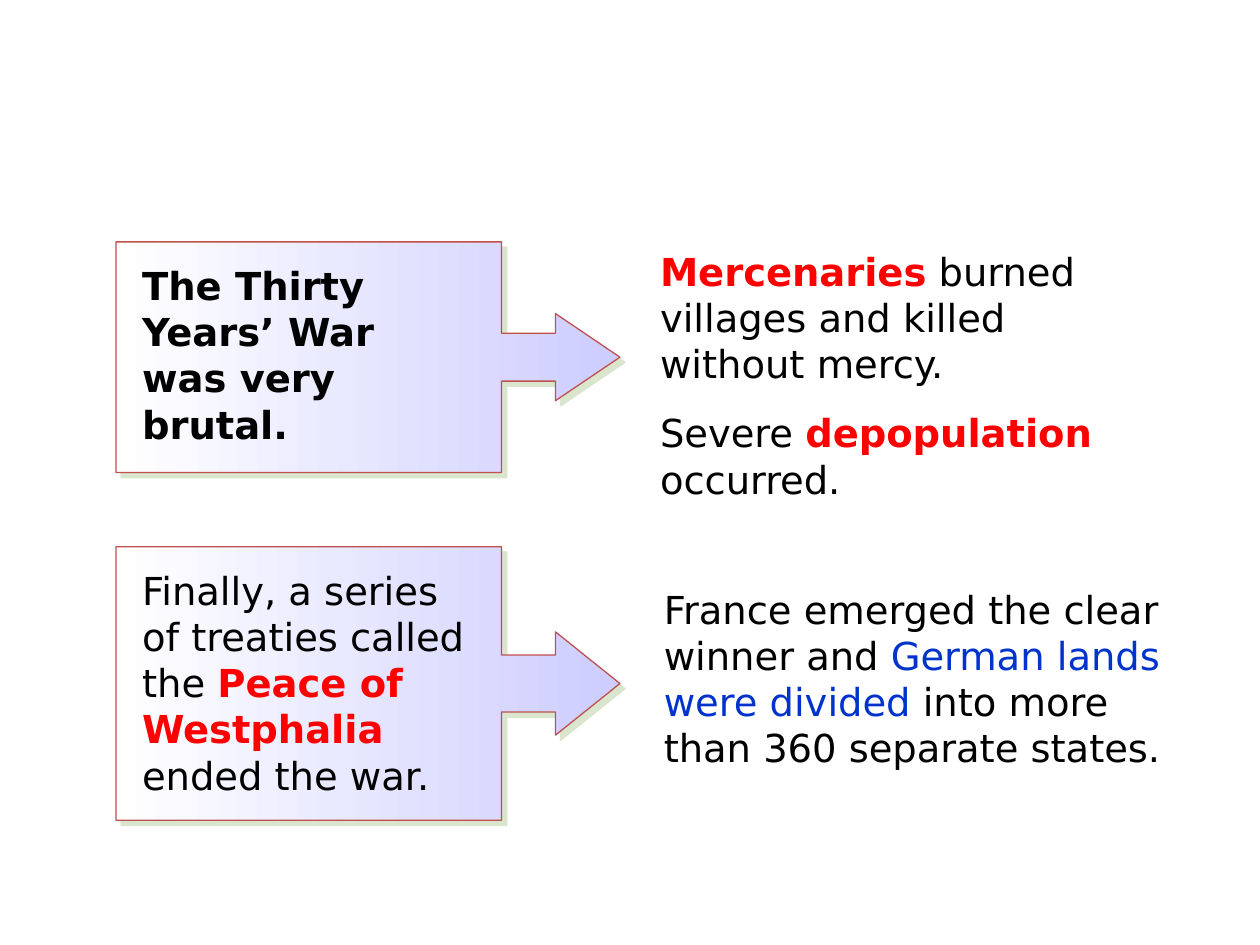
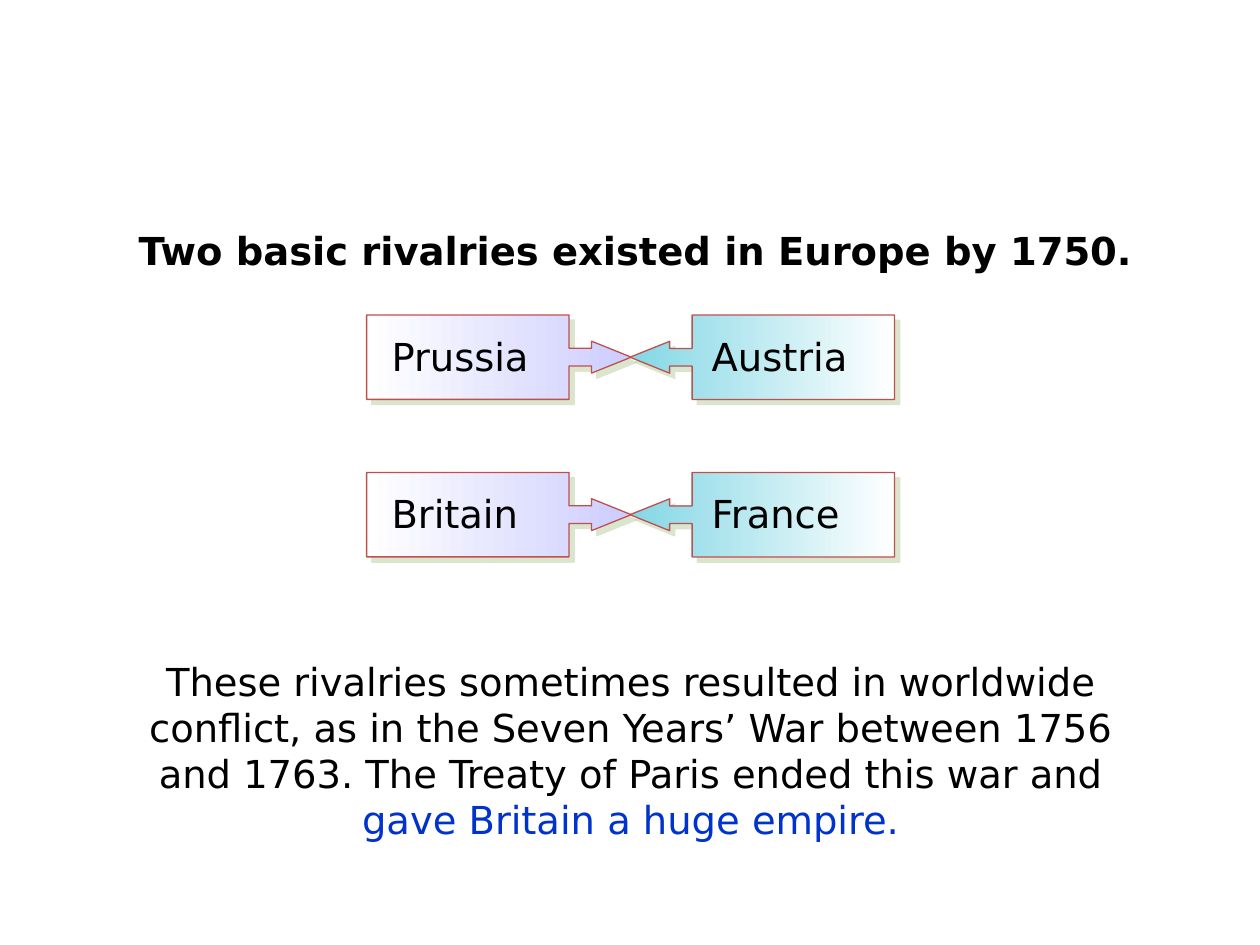
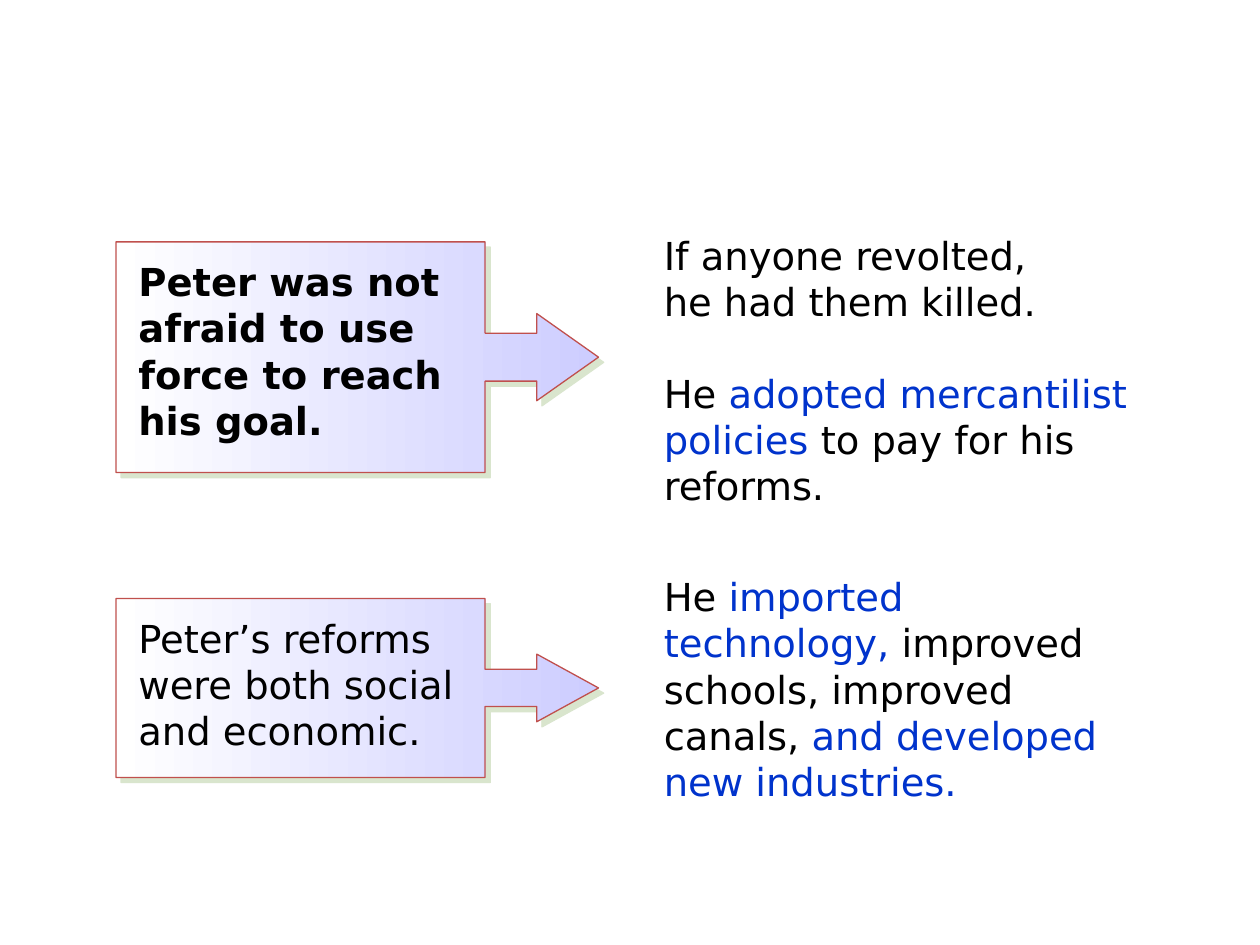
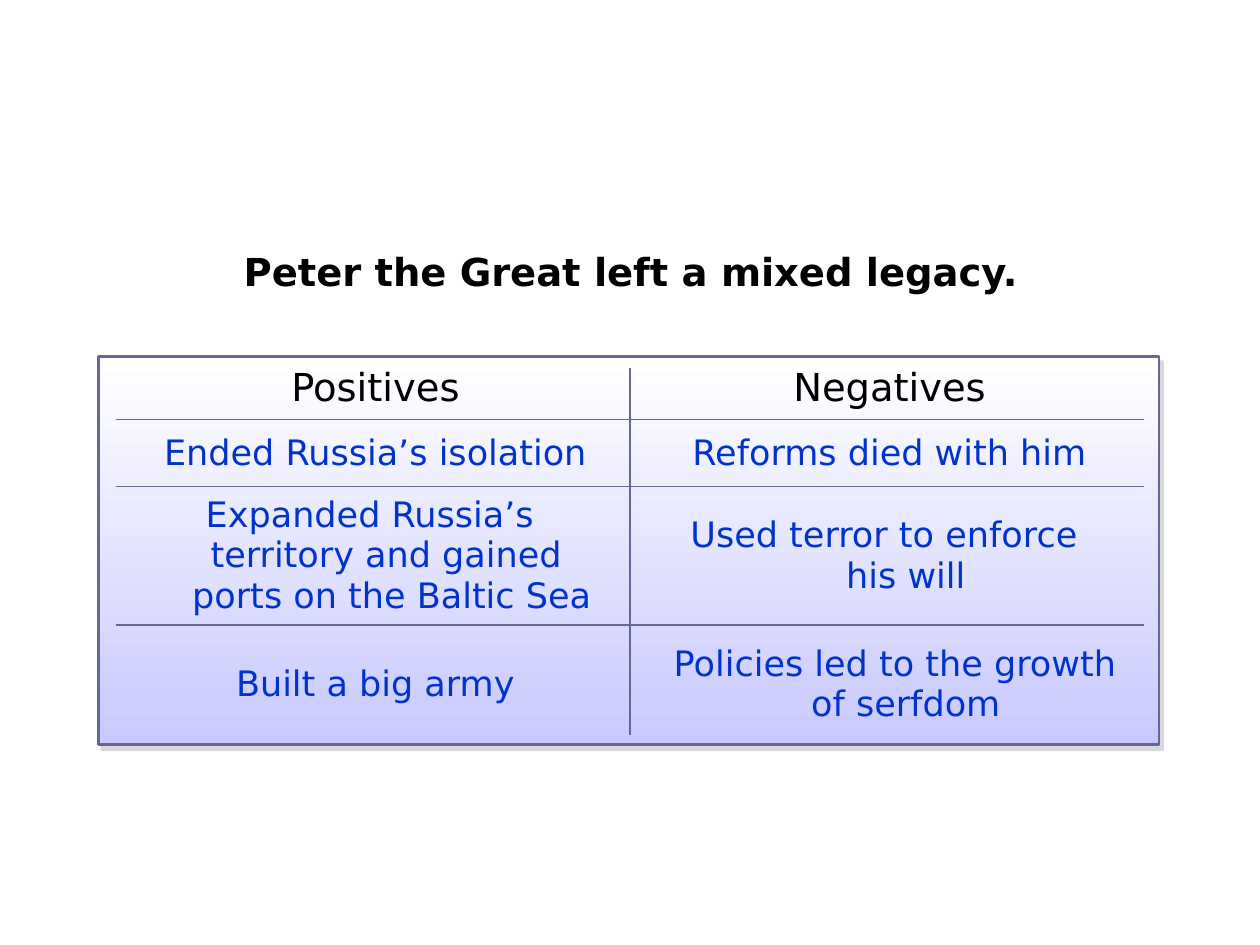
from lxml import etree
from pptx import Presentation
from pptx.dml.color import RGBColor
from pptx.enum.shapes import MSO_CONNECTOR, MSO_SHAPE
from pptx.enum.text import MSO_ANCHOR, MSO_AUTO_SIZE, PP_ALIGN
from pptx.oxml import parse_xml
from pptx.oxml.ns import nsdecls, qn
from pptx.util import Inches, Pt

STRAIGHT = MSO_CONNECTOR.STRAIGHT
CALLOUT = MSO_SHAPE.UP_ARROW_CALLOUT
RECT = MSO_SHAPE.RECTANGLE
TOP, MIDDLE = MSO_ANCHOR.TOP, MSO_ANCHOR.MIDDLE
GROW = MSO_AUTO_SIZE.SHAPE_TO_FIT_TEXT
LEFT, CENTER = PP_ALIGN.LEFT, PP_ALIGN.CENTER

TITLE_ONLY, BLANK = 5, 6
FONT = "DejaVu Sans"
COLORS = {
    "black": "000000", "red": "FF0000", "blue": "0033CC", "white": "FFFFFF",
    "lilac": "CDCDFF", "aqua": "83D7E5", "mist": "C9C9FF",
    "brick": "C0504D", "slate": "666699", "moss": "ADC793", "gray": "B2B2B2",
}
STYLES = {
    "plain": ("black", {"bold": False}),
    "bold": ("black", {"bold": True}),
    "key": ("red", {"bold": True}),
    "blue": ("blue", {"bold": False}),
}
FRAME = {"word_wrap": True, "auto_size": GROW, "vertical_anchor": TOP}
CARD_SHADE = ("moss", 46, 4.2, 45)
PANEL_SHADE = ("gray", 50, 3.6, 56)
BOX_SHARE = 0.765


def rgb(name):
    return RGBColor.from_string(COLORS[name])


def assign(item, values):
    for name, value in values.items():
        setattr(item, name, value)


def write(para, runs, size=22, align=LEFT):
    """Fill a paragraph from (text, style) pairs; a newline is a line break."""
    para.alignment = align
    for words, style in runs:
        color, values = STYLES[style]
        for i, part in enumerate(words.split("\n")):
            if i:
                para.add_line_break()
            run = para.add_run()
            run.text = part
            assign(run.font, {"name": FONT, "size": Pt(size), **values})
            run.font.color.rgb = rgb(color)


def text(slide, spot, *paras, gap=0, align=LEFT):
    box = slide.shapes.add_textbox(*map(Inches, spot))
    frame = box.text_frame
    assign(frame, FRAME)
    for i, runs in enumerate(paras):
        para = frame.add_paragraph() if i else frame.paragraphs[0]
        if i:
            para.space_before = Pt(gap)
        write(para, runs, align=align)


def title(slide, spot, words, align=CENTER):
    head = slide.shapes.title
    for name, value in zip(("left", "top", "width", "height"), spot):
        setattr(head, name, Inches(value))
    assign(head.text_frame, FRAME)
    write(head.text_frame.paragraphs[0], [(words, "bold")], align=align)


def shade(shape, color, alpha, dist, angle):
    """Give the shape a hard-edged shadow that ignores rotation."""
    shape.shadow.inherit = False
    effects = shape._element.spPr.find(qn("a:effectLst"))
    effects.append(parse_xml(
        f'<a:outerShdw {nsdecls("a")} blurRad="0" dist="{Pt(dist)}" '
        f'dir="{angle * 60000}" algn="ctr" rotWithShape="0">'
        f'<a:srgbClr val="{COLORS[color]}"><a:alpha val="{alpha * 1000}"/>'
        '</a:srgbClr></a:outerShdw>'))


def panel(slide, kind, spot, fades, line, weight, shadow):
    """Add a shape whose fill fades downwards from one colour to another."""
    shape = slide.shapes.add_shape(kind, *map(Inches, spot))
    shape.fill.gradient()
    shape.fill.gradient_angle = 270
    for stop, color in zip(shape.fill.gradient_stops, fades):
        stop.color.rgb = rgb(color)
    shape.line.color.rgb = rgb(line)
    shape.line.width = Pt(weight)
    shade(shape, *shadow)
    return shape


def callout(slide, spot, tint="lilac", turn=90, head=0.128):
    """Turn an arrow callout sideways so that it covers spot."""
    left, top, long, thick = spot
    upright = (left + (long - thick) / 2, top + (thick - long) / 2, thick, long)
    shape = panel(slide, CALLOUT, upright, (tint, "white"), "brick", 0.75,
                  CARD_SHADE)
    shape.rotation = turn
    for i, value in enumerate((0.208, 0.189, head * long / thick, BOX_SHARE)):
        shape.adjustments[i] = value


def card(slide, spot, runs, pad, wide):
    callout(slide, spot)
    left, top, _, thick = spot
    text(slide, (left + pad, top + pad, wide, thick - 2 * pad), runs)


def rivals(slide, top, names):
    """Set two callouts head to head."""
    long, thick = 2.1, 0.67
    sides = ((2.91, 0.1, "lilac", 90), (5.0, 0.55, "aqua", 270))
    for name, (left, pad, tint, turn) in zip(names, sides):
        callout(slide, (left, top, long, thick), tint, turn, head=0.15)
        text(slide, (left + pad, top + 0.09, 1.45, 0.47), [(name, "plain")])


def edge(cell, side, weight):
    """Draw one cell border, or hide it when weight is 0."""
    line = etree.SubElement(cell._tc.get_or_add_tcPr(), qn(f"a:ln{side}"),
                            w=str(Pt(weight)))
    if not weight:
        etree.SubElement(line, qn("a:noFill"))
        return
    fill = etree.SubElement(line, qn("a:solidFill"))
    etree.SubElement(fill, qn("a:srgbClr"), val=COLORS["slate"])


def table(slide, spot, cols, rows, rules, data):
    """Add a clear table; rules are the line widths above and below rows."""
    grid = slide.shapes.add_table(len(rows), len(cols),
                                  *map(Inches, spot)).table
    assign(grid, {"first_row": False, "horz_banding": False})
    for col, wide in zip(grid.columns, cols):
        col.width = Inches(wide)
    for r, words in enumerate(data):
        grid.rows[r].height = Inches(rows[r])
        size, style = (20, "blue") if r else (22, "plain")
        for c, word in enumerate(words):
            cell = grid.cell(r, c)
            cell.vertical_anchor = MIDDLE
            para = cell.text_frame.paragraphs[0]
            write(para, [(word, style)], size, CENTER)
            props = para._p.get_or_add_pPr()
            props.set("marL", str(Inches(0.26)))
            props.set("indent", str(Inches(-0.26)))
            for side, weight in zip("LRTB", (0, 0, rules[r], rules[r + 1])):
                edge(cell, side, weight)
            cell.fill.background()


def rule(slide, start, end):
    line = slide.shapes.add_connector(STRAIGHT, *map(Inches, start + end))
    line.line.color.rgb = rgb("slate")
    line.line.width = Pt(0.75)
    etree.SubElement(line._element.spPr, qn("a:effectLst"))


def war(slide):
    card(slide, (0.92, 1.92, 4, 1.83),
         [("The Thirty Years’ War \nwas very \nbrutal.", "bold")], 0.11, 3.06)
    card(slide, (0.92, 4.34, 4, 2.17),
         [("Finally, a series \nof treaties called the ", "plain"),
          ("Peace of Westphalia", "key"), (" ended the war.", "plain")],
         0.11, 3.06)
    text(slide, (5.14, 1.92, 4.08, 2.4),
         [("Mercenaries", "key"),
          (" burned villages and killed without mercy.", "plain")],
         [("Severe ", "plain"), ("depopulation", "key"),
          (" occurred.", "plain")], gap=13)
    text(slide, (5.17, 4.6, 4.5, 1.59),
         [("France emerged the clear winner and ", "plain"),
          ("German lands were divided", "blue"),
          (" into more than 360 separate states.", "plain")])


def europe(slide):
    title(slide, (1, 1.75, 8.25, 0.47),
          "Two basic rivalries existed in Europe by 1750.", LEFT)
    rivals(slide, 2.5, ("Prussia", "Austria"))
    rivals(slide, 3.75, ("Britain", "France"))
    text(slide, (0.92, 5.17, 8.17, 1.59),
         [("These rivalries sometimes resulted in worldwide conflict, as in "
           "the Seven Years’ War between 1756 and 1763. The Treaty of Paris "
           "ended this war and ", "plain"),
          ("gave Britain a huge empire.", "blue")], align=CENTER)


def peter(slide):
    card(slide, (0.92, 1.92, 3.83, 1.83),
         [("Peter was not afraid to use force to reach his goal.", "bold")],
         0.08, 2.75)
    card(slide, (0.92, 4.75, 3.83, 1.42),
         [("Peter’s reforms were both social and economic.", "plain")],
         0.08, 2.75)
    text(slide, (5.17, 1.79, 3.92, 2.33),
         [("If anyone revolted, \nhe had them killed.", "plain")],
         [("He ", "plain"), ("adopted mercantilist policies", "blue"),
          (" to pay for his reforms.", "plain")], gap=26)
    text(slide, (5.17, 4.5, 3.92, 1.96),
         [("He ", "plain"), ("imported technology,", "blue"),
          (" improved schools, improved canals, ", "plain"),
          ("and developed new industries.", "blue")])


def legacy(slide):
    title(slide, (0.92, 1.92, 8.17, 0.47),
          "Peter the Great left a mixed legacy.")
    panel(slide, RECT, (0.78, 2.83, 8.42, 3.08), ("white", "mist"), "slate",
          1.5, PANEL_SHADE)
    table(slide, (0.92, 2.83, 8.16, 3.07), (4.12, 4.04),
          (0.5, 0.53, 1.1, 0.94), (1, 1, 0.75, 1, 1), (
              ("Positives", "Negatives"),
              ("Ended Russia’s isolation", "Reforms died with him"),
              ("Expanded Russia’s \nterritory and gained \n"
               "ports on the Baltic Sea",
               "Used terror to enforce \nhis will"),
              ("Built a big army",
               " Policies led to the growth of serfdom")))
    rule(slide, (5, 2.92), (5, 5.83))


def main():
    deck = Presentation()
    deck.slide_width, deck.slide_height = Inches(10), Inches(7.5)
    pages = ((war, BLANK), (europe, TITLE_ONLY), (peter, BLANK),
             (legacy, TITLE_ONLY))
    for build, layout in pages:
        build(deck.slides.add_slide(deck.slide_layouts[layout]))
    deck.save("out.pptx")


if __name__ == "__main__":
    main()
